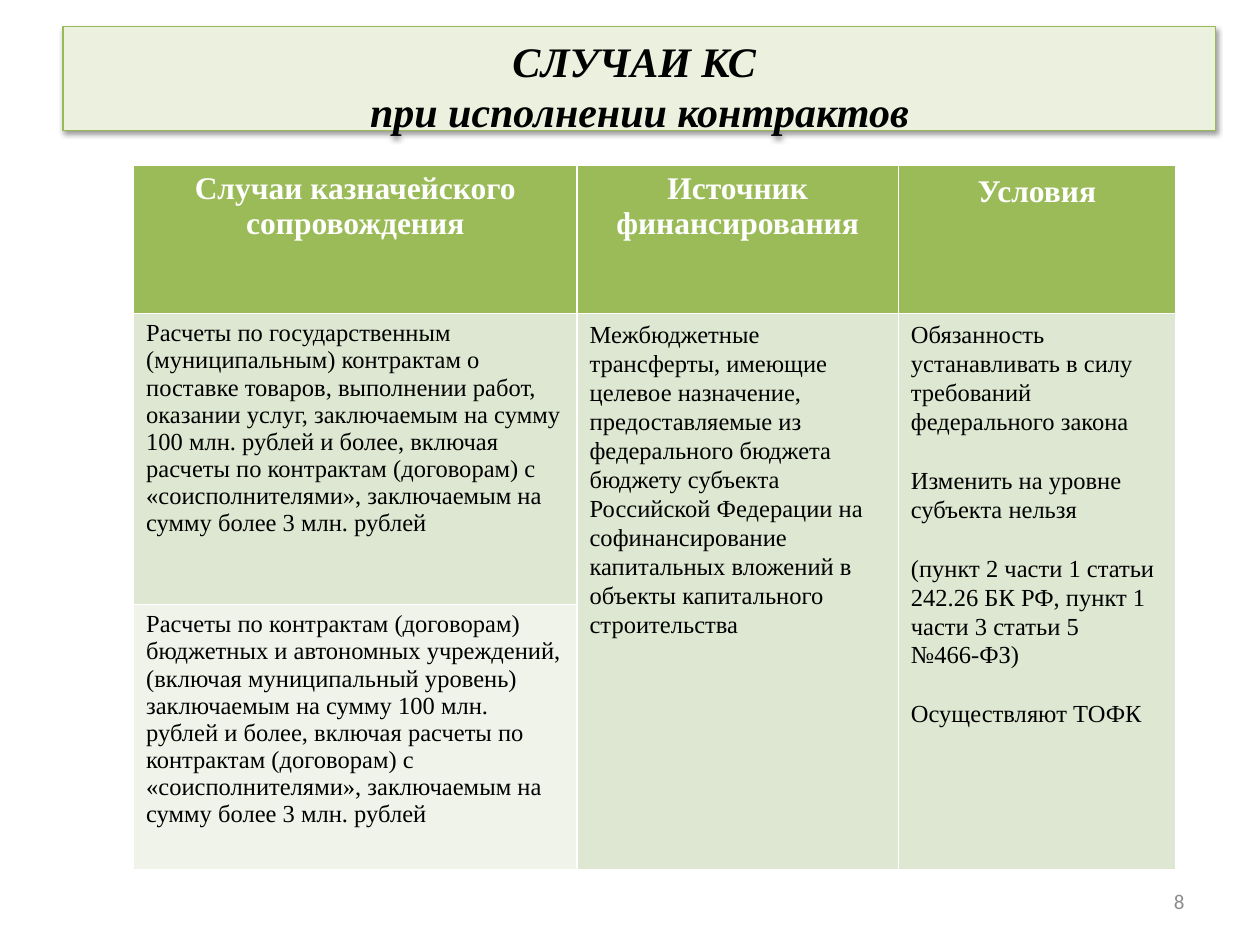
from lxml.etree import fromstring
from pptx import Presentation
from pptx.dml.color import RGBColor
from pptx.enum.text import MSO_ANCHOR, MSO_AUTO_SIZE, PP_ALIGN
from pptx.util import Inches, Pt

THEME = {
    "serif": "Times New Roman", "sans": "Calibri",
    "title_pt": Pt(24), "head_pt": Pt(18), "body_pt": Pt(14), "number_pt": Pt(12),
    "black": RGBColor.from_string("000000"), "white": RGBColor.from_string("FFFFFF"),
    "grey": RGBColor.from_string("8C8C8C"), "green": RGBColor.from_string("9BBB59"),
    "edge": RGBColor.from_string("98B955"), "pale": RGBColor.from_string("EBF1DE"),
    "band1": RGBColor.from_string("DEE7D1"), "band2": RGBColor.from_string("EFF3EA"),
}
TITLE_FONT = {"name": THEME["serif"], "size": THEME["title_pt"], "bold": True, "italic": True}
HEAD_FONT = {"name": THEME["serif"], "size": THEME["head_pt"], "bold": True}
BODY_FONT = {"name": THEME["serif"], "size": THEME["body_pt"], "bold": False}
NUMBER_FONT = {"name": THEME["sans"], "size": THEME["number_pt"]}

prs = Presentation()
prs.slide_width, prs.slide_height = Inches(10), Inches(7.5)
W, H = prs.slide_width, prs.slide_height


def area(x, y, w, h):
    """Turn shares of the slide's size into left, top, width, height."""
    return int(W * x), int(H * y), int(W * w), int(H * h)


def write(p, text, font, color, **layout):
    """Fill a paragraph; layout holds paragraph attributes."""
    p.text = text
    for name, value in layout.items():
        setattr(p, name, value)
    for r in p.runs:
        for name, value in font.items():
            setattr(r.font, name, value)
        r.font.color.rgb = color


s = prs.slides.add_slide(prs.slide_layouts[5])

# Title
sp = s.shapes.title
sp.left, sp.top, sp.width, sp.height = area(0.05, 0.028, 0.915, 0.11)
sp.fill.solid()
sp.fill.fore_color.rgb = THEME["pale"]
sp.line.color.rgb = THEME["edge"]
sp.line.width = Pt(0.75)
sp._element.spPr.append(fromstring(
    '<a:effectLst xmlns:a="http://schemas.openxmlformats.org/drawingml/2006/main">'
    '<a:outerShdw blurRad="40000" dist="20000" dir="5400000" rotWithShape="0">'
    '<a:srgbClr val="000000"><a:alpha val="38000"/></a:srgbClr>'
    '</a:outerShdw></a:effectLst>'))
tf = sp.text_frame
tf.auto_size = MSO_AUTO_SIZE.NONE
tf.vertical_anchor = MSO_ANCHOR.TOP
tf.margin_top = Inches(0.07)
write(tf.paragraphs[0], "СЛУЧАИ КС \vпри исполнении контрактов", TITLE_FONT,
      THEME["black"], alignment=PP_ALIGN.CENTER)

# Table
table = s.shapes.add_table(3, 3, *area(0.106, 0.175, 0.827, 0.745)).table
for column, share in zip(table.columns, (0.352, 0.255, 0.22)):
    column.width = int(W * share)
for row, share in zip(table.rows, (0.157, 0.308, 0.28)):
    row.height = int(H * share)
for c in (1, 2):
    table.cell(1, c).merge(table.cell(2, c))
for r, color in enumerate((THEME["green"], THEME["band1"], THEME["band2"])):
    for c in range(3):
        cell = table.cell(r, c)
        if not cell.is_spanned:
            cell.fill.solid()
            cell.fill.fore_color.rgb = color

loose = {"line_spacing": 1.07, "space_after": Pt(8)}
headings = (
    ("Случаи казначейского сопровождения", {}),
    ("Источник финансирования", {}),
    ("Условия", loose),
)
for c, (text, layout) in enumerate(headings):
    write(table.cell(0, c).text_frame.paragraphs[0], text, HEAD_FONT, THEME["white"],
          alignment=PP_ALIGN.CENTER, **layout)

bodies = (
    (1, 0, {}, "Расчеты по государственным (муниципальным) контрактам о поставке товаров, "
     "выполнении работ, оказании услуг, заключаемым на сумму 100 млн. рублей и более, "
     "включая расчеты по контрактам (договорам) с «соисполнителями», заключаемым на "
     "сумму более 3 млн. рублей"),
    (2, 0, {}, "Расчеты по контрактам (договорам) бюджетных и автономных учреждений, "
     "(включая муниципальный уровень) заключаемым на сумму 100 млн. рублей и более, "
     "включая расчеты по контрактам (договорам) с «соисполнителями», заключаемым на "
     "сумму более 3 млн. рублей"),
    (1, 1, loose, "Межбюджетные трансферты, имеющие целевое назначение, предоставляемые из "
     "федерального бюджета бюджету субъекта Российской Федерации на софинансирование "
     "капитальных вложений в объекты капитального строительства"),
)
for r, c, layout, text in bodies:
    write(table.cell(r, c).text_frame.paragraphs[0], text, BODY_FONT, THEME["black"], **layout)

gap = Pt(17)
conditions = (
    ("Обязанность устанавливать в силу требований федерального закона", Pt(0)),
    ("Изменить на уровне субъекта нельзя", gap),
    ("(пункт 2 части 1 статьи 242.26 БК РФ, пункт 1 части 3 статьи 5", gap),
    ("№466-ФЗ)", Pt(0)),
    ("Осуществляют ТОФК", gap),
)
tf = table.cell(1, 2).text_frame
for i, (text, before) in enumerate(conditions):
    p = tf.add_paragraph() if i else tf.paragraphs[0]
    write(p, text, BODY_FONT, THEME["black"], line_spacing=1.07, space_before=before)

# Slide number
tf = s.shapes.add_textbox(*area(0.717, 0.927, 0.233, 0.053)).text_frame
tf.word_wrap = True
tf.vertical_anchor = MSO_ANCHOR.MIDDLE
write(tf.paragraphs[0], "8", NUMBER_FONT, THEME["grey"], alignment=PP_ALIGN.RIGHT)

prs.save("out.pptx")
